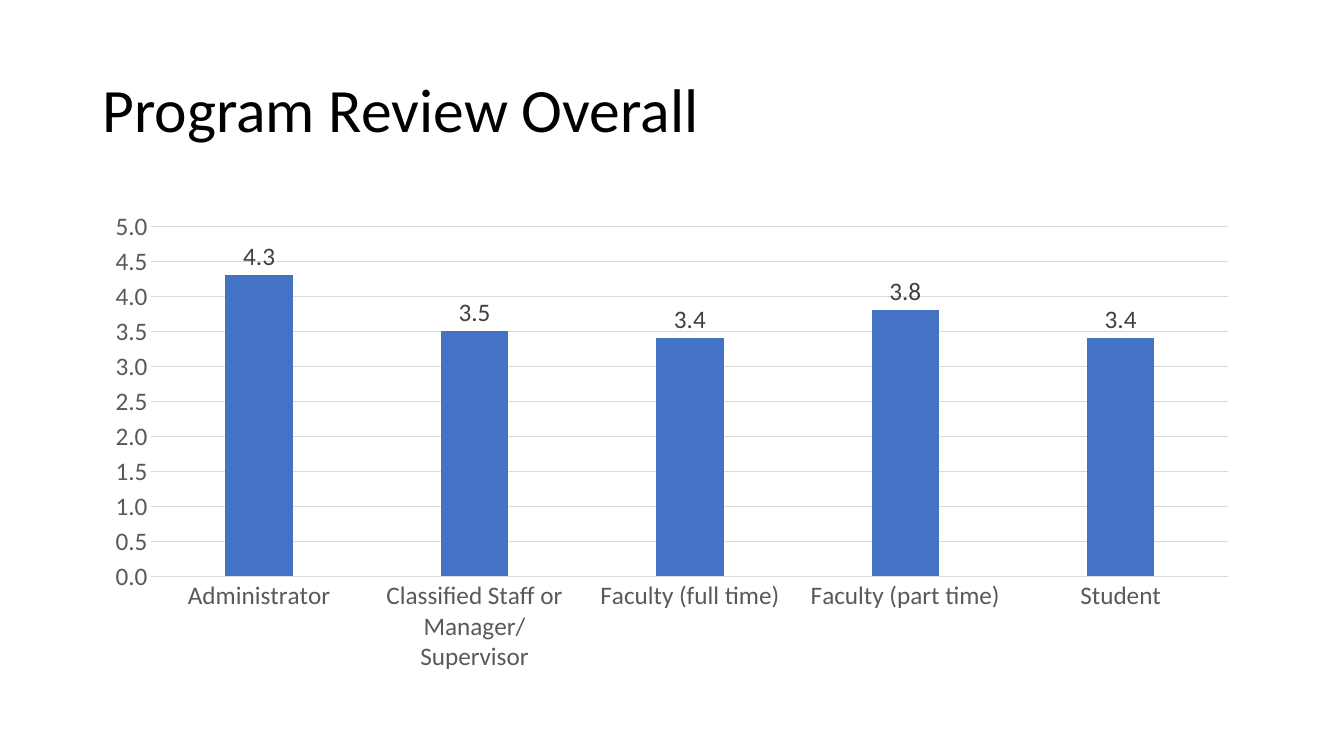
from dataclasses import dataclass

from pptx import Presentation
from pptx import util as u
from pptx.chart.data import CategoryChartData
from pptx.dml.color import RGBColor
from pptx.enum import chart as ch, text

PX = 9525  # EMU per px, 96 px to the inch


@dataclass(frozen=True)
class Theme:
    font: str = "Calibri"
    title_size: int = 44
    chart_size: int = 18
    title: str = "000000"
    axis: str = "595959"
    label: str = "404040"
    grid: str = "D9D9D9"
    bar: str = "4472C4"


def format_font(font, name, size, color):
    font.name, font.size, font.bold = name, u.Pt(size), False
    font.color.rgb = RGBColor.from_string(color)


def write_text(frame, words, *, font, size, color, spacing=1.0):
    frame.text = words
    frame.word_wrap = True
    frame.auto_size = text.MSO_AUTO_SIZE.NONE
    frame.vertical_anchor = text.MSO_ANCHOR.MIDDLE
    for paragraph in frame.paragraphs:
        paragraph.alignment = text.PP_ALIGN.LEFT
        paragraph.line_spacing = spacing
        for run in paragraph.runs:
            format_font(run.font, font, size, color)


class SlideBuilder:
    def __init__(self, deck, theme):
        self.theme = theme
        self.slide = deck.slides.add_slide(deck.slide_layouts[5])

    def title(self, words, left, top, width, height):
        heading = self.slide.shapes.title
        heading.left, heading.top = left * PX, top * PX
        heading.width, heading.height = width * PX, height * PX
        write_text(heading.text_frame, words, font=self.theme.font,
                   size=self.theme.title_size, color=self.theme.title, spacing=0.9)

    def chart_font(self, font, color):
        format_font(font, self.theme.font, self.theme.chart_size, color)

    def hairline(self, line):
        line.color.rgb = RGBColor.from_string(self.theme.grid)
        line.width = u.Pt(0.75)

    def column_chart(self, series_name, ratings, left, top, width, height):
        data = CategoryChartData(number_format="0.0")
        data.categories = list(ratings)
        data.add_series(series_name, list(ratings.values()))
        chart = self.slide.shapes.add_chart(
            ch.XL_CHART_TYPE.COLUMN_CLUSTERED,
            left * PX, top * PX, width * PX, height * PX, data).chart
        chart.has_legend = chart.has_title = False
        self.chart_font(chart.font, self.theme.title)

        # Axes and gridlines
        groups, scores = chart.category_axis, chart.value_axis
        for axis in (groups, scores):
            axis.major_tick_mark = axis.minor_tick_mark = ch.XL_TICK_MARK.NONE
            self.chart_font(axis.tick_labels.font, self.theme.axis)
        self.hairline(groups.format.line)
        self.hairline(scores.major_gridlines.format.line)
        scores.format.line.fill.background()
        scores.minimum_scale, scores.maximum_scale, scores.major_unit = 0, 5, 0.5
        scores.tick_labels.number_format = "0.0"
        scores.tick_labels.number_format_is_linked = False

        # Bars and their values
        plot = chart.plots[0]
        plot.gap_width, plot.overlap = 219, -27
        plot.vary_by_categories = False
        bars = plot.series[0]
        bars.format.fill.solid()
        bars.format.fill.fore_color.rgb = RGBColor.from_string(self.theme.bar)
        labels = bars.data_labels
        labels.show_value = True
        labels.position = ch.XL_LABEL_POSITION.OUTSIDE_END
        labels.number_format = "0.0"
        labels.number_format_is_linked = False
        self.chart_font(labels.font, self.theme.label)


def main():
    deck = Presentation()
    deck.slide_width, deck.slide_height = 1280 * PX, 720 * PX
    review = SlideBuilder(deck, Theme())

    # Heading
    review.title("Program Review Overall", 88, 38, 1104, 139)

    # Average rating by respondent group
    ratings = {
        "Administrator": 4.3,
        "Classified Staff or Manager/Supervisor": 3.5,
        "Faculty (full time)": 3.4,
        "Faculty (part time)": 3.8,
        "Student": 3.4,
    }
    review.column_chart("Series 1", ratings, 88, 192, 1104, 457)

    deck.save("out.pptx")


if __name__ == "__main__":
    main()
